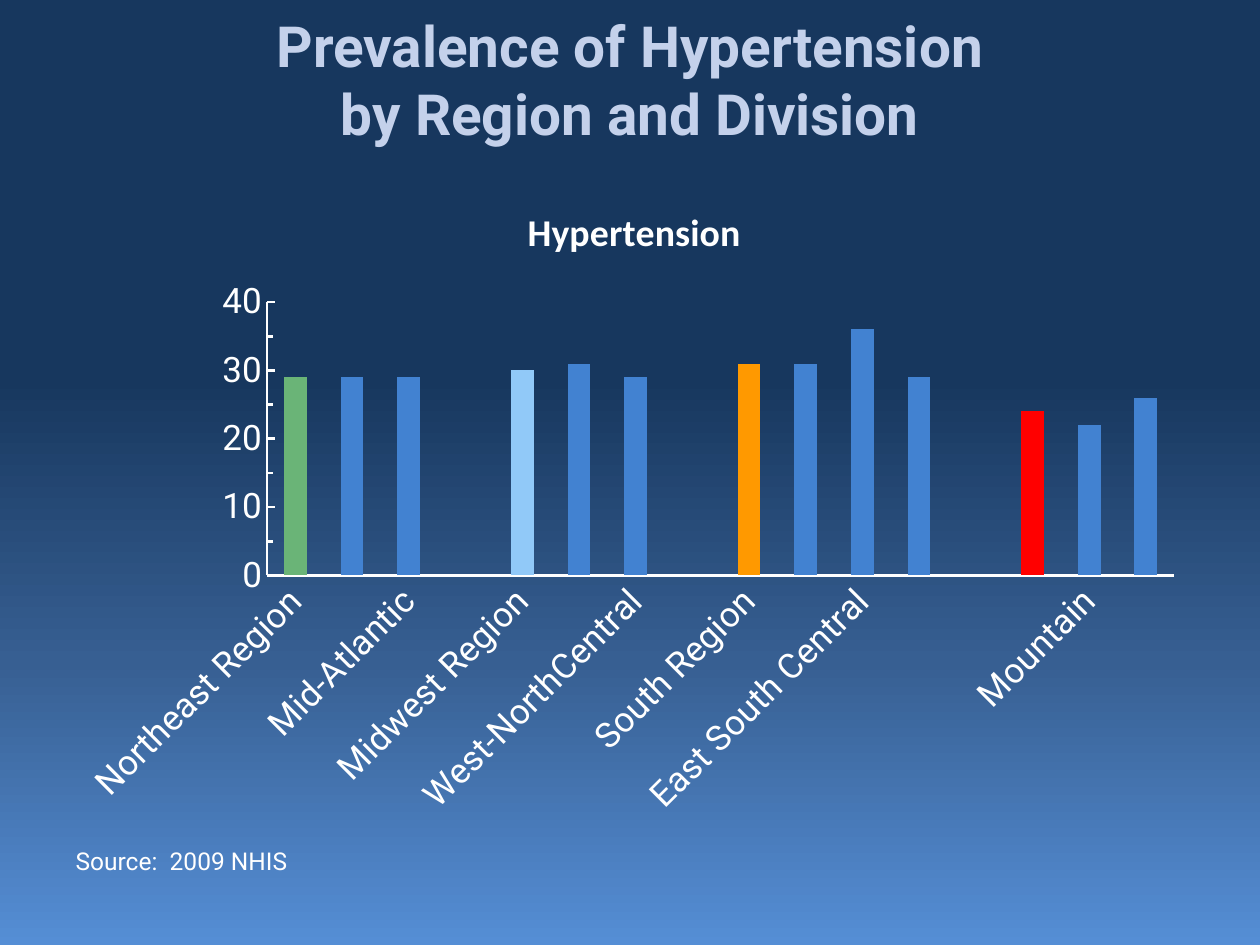
from lxml.etree import SubElement
from pptx import Presentation
from pptx.chart.data import CategoryChartData
from pptx.dml.color import RGBColor
from pptx.enum.chart import XL_CHART_TYPE as ChartType, XL_TICK_MARK as Tick
from pptx.enum.text import MSO_ANCHOR as Anchor, MSO_AUTO_SIZE as AutoSize, PP_ALIGN as Align
from pptx.oxml.ns import qn
from pptx.util import Pt

WHITE = RGBColor(0xFF, 0xFF, 0xFF)
PALE_BLUE = RGBColor(0xC4, 0xD1, 0xEB)
NAVY = RGBColor(0x17, 0x37, 0x5E)
MID_BLUE = RGBColor(0x37, 0x5F, 0x92)
SKY = RGBColor(0x55, 0x8E, 0xD5)
DIVISION_BLUE = RGBColor(0x42, 0x82, 0xD1)
NORTHEAST_GREEN = RGBColor(0x6A, 0xB4, 0x77)
MIDWEST_BLUE = RGBColor(0x91, 0xC9, 0xF8)
SOUTH_ORANGE = RGBColor(0xFF, 0x99, 0x00)
WEST_RED = RGBColor(0xFF, 0x00, 0x00)


def style(font, name, size, color, bold=False):
    font.name = name
    font.size = Pt(size)
    font.bold = bold
    font.color.rgb = color


def place(shape, left, top, width, height):
    shape.left, shape.top = Pt(left), Pt(top)
    shape.width, shape.height = Pt(width), Pt(height)


prs = Presentation()
prs.slide_width, prs.slide_height = Pt(720), Pt(540)
slide = prs.slides.add_slide(prs.slide_layouts[1])

backdrop = slide.background.fill
backdrop.gradient()
backdrop.gradient_angle = 270
stops = slide.element.find(".//" + qn("a:gsLst"))
for stop in list(stops):
    stops.remove(stop)
for percent, color in ((0, NAVY), (40, NAVY), (70, MID_BLUE), (100, SKY)):
    stop = SubElement(stops, qn("a:gs"), pos=str(percent * 1000))
    SubElement(stop, qn("a:srgbClr"), val=str(color))

title = slide.shapes.title
place(title, 36, 0, 648, 90)
title.text_frame.auto_size = AutoSize.NONE
title.text_frame.vertical_anchor = Anchor.MIDDLE
heading = title.text_frame.paragraphs[0]
heading.alignment = Align.CENTER
for number, line in enumerate(("Prevalence of Hypertension", "by Region and Division")):
    if number:
        heading.add_line_break()
    run = heading.add_run()
    run.text = line
    style(run.font, "Roboto", 32.4, PALE_BLUE, True)

source = slide.placeholders[1]
place(source, 36, 480, 648, 18)
source.text_frame.auto_size = AutoSize.NONE
citation = source.text_frame.paragraphs[0]
run = citation.add_run()
run.text = "Source:  2009 NHIS"
style(run.font, "Roboto", 14, WHITE)
indents = citation._p.get_or_add_pPr()
indents.set("marL", str(Pt(27)))
indents.set("indent", str(-Pt(27)))
SubElement(indents, qn("a:buNone"))

prevalence = CategoryChartData()
prevalence.categories = [
    "Northeast Region", "New England", "Mid-Atlantic", "",
    "Midwest Region", "East-North Central", "West-NorthCentral", "",
    "South Region", "South Atlantic", "East South Central", "West South Central", "",
    "West", "Mountain", "Pacific",
]
prevalence.add_series("Series 1", [29, 29, 29, None, 30, 31, 29, None,
                                   31, 31, 36, 29, None, 24, 22, 26])
chart = slide.shapes.add_chart(ChartType.COLUMN_CLUSTERED, Pt(36), Pt(102),
                               Pt(648), Pt(372), prevalence).chart
style(chart.font, "Calibri", 18, WHITE)
chart.has_legend = False
chart.has_title = True
chart_heading = chart.chart_title.text_frame.paragraphs[0].add_run()
chart_heading.text = " Hypertension"
style(chart_heading.font, "Calibri", 21.6, WHITE, True)

columns = chart.plots[0]
columns.gap_width = 150
columns.vary_by_categories = False
bars = columns.series[0]
bars.format.fill.solid()
bars.format.fill.fore_color.rgb = DIVISION_BLUE
for index, color in ((0, NORTHEAST_GREEN), (4, MIDWEST_BLUE),
                     (8, SOUTH_ORANGE), (13, WEST_RED)):
    region_fill = bars.points[index].format.fill
    region_fill.solid()
    region_fill.fore_color.rgb = color

regions, percents = chart.category_axis, chart.value_axis
for axis, tick in ((regions, Tick.NONE), (percents, Tick.INSIDE)):
    axis.has_major_gridlines = False
    axis.major_tick_mark = axis.minor_tick_mark = tick
    style(axis.tick_labels.font, "Roboto", 20, WHITE)
    axis.format.line.color.rgb = WHITE
    axis.format.line.width = Pt(1.5)
percents.minimum_scale, percents.maximum_scale = 0, 40
percents.major_unit, percents.minor_unit = 10, 5
regions._element.find(".//" + qn("a:bodyPr")).set("rot", "-2700000")

plot_area = chart._chartSpace.chart.plotArea
layout = plot_area.find(qn("c:layout"))
if layout is None:
    layout = SubElement(plot_area, qn("c:layout"))
    plot_area.insert(0, layout)
manual = SubElement(layout, qn("c:manualLayout"))
for tag, value in (("layoutTarget", "inner"), ("xMode", "edge"), ("yMode", "edge"),
                   ("x", "0.18"), ("y", "0.19"), ("w", "0.8"), ("h", "0.42")):
    SubElement(manual, qn("c:" + tag), val=value)

prs.save("out.pptx")
